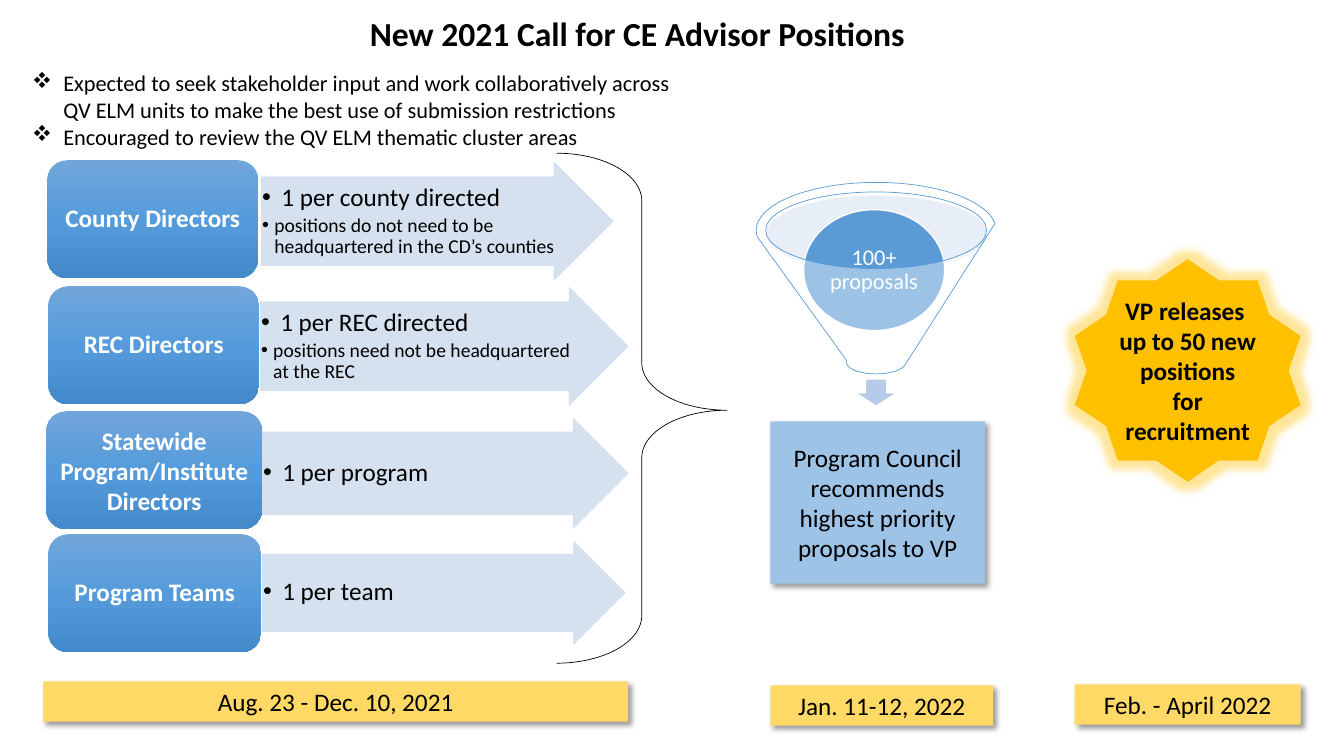
from dataclasses import dataclass
from copy import deepcopy

from pptx import Presentation
from pptx.dml.color import RGBColor
from pptx.enum.shapes import MSO_SHAPE
from pptx.enum.text import MSO_ANCHOR, PP_ALIGN
from pptx.oxml import parse_xml
from pptx.oxml.ns import nsdecls, qn
from pptx.util import Inches, Pt

RECTANGLE = MSO_SHAPE.RECTANGLE
ROUNDED = MSO_SHAPE.ROUNDED_RECTANGLE
RIGHT_ARROW = MSO_SHAPE.RIGHT_ARROW
DOWN_ARROW = MSO_SHAPE.DOWN_ARROW
ELLIPSE = MSO_SHAPE.OVAL
FUNNEL = MSO_SHAPE.FUNNEL
STAR = MSO_SHAPE.STAR_10_POINT
BRACE = MSO_SHAPE.RIGHT_BRACE
CENTER = PP_ALIGN.CENTER
LEFT = PP_ALIGN.LEFT
MIDDLE = MSO_ANCHOR.MIDDLE
TOP = MSO_ANCHOR.TOP

FONT = "Calibri"
DOT = ("•", "Arial")
DIAMOND = ("v", "Wingdings")
COLORS = {
    "black": "000000",
    "white": "FFFFFF",
    "arrow": "D2DEEF",
    "date": "FFD966",
    "star": "FFC000",
    "rim": "C4D5EB",
    "down_arrow": "B5CBE7",
    "council": "9DC3E6",
    "blue": "5B9BD5",
    "label_top": "71A6DB",
    "label_middle": "559BDB",
    "label_bottom": "448ACA",
}
LABEL_STOPS = ((0, "label_top"), (0.5, "label_middle"), (1, "label_bottom"))
SHADOW = (
    f'<a:outerShdw {nsdecls("a")} blurRad="50800" dist="38100" dir="2700000" algn="tl" '
    f'rotWithShape="0"><a:srgbClr val="{COLORS["black"]}"><a:alpha val="40000"/>'
    "</a:srgbClr></a:outerShdw>"
)
GLOW = (
    f'<a:glow {nsdecls("a")} rad="139700"><a:srgbClr val="{COLORS["star"]}">'
    '<a:alpha val="40000"/></a:srgbClr></a:glow>'
)


@dataclass
class Box:
    left: float
    top: float
    width: float
    height: float

    def lengths(self):
        return [Inches(value) for value in (self.left, self.top, self.width, self.height)]


@dataclass
class Line:
    text: str
    size: float = 18
    color: str = "black"
    bold: bool = False
    align: PP_ALIGN = CENTER
    spacing: float = 1.0
    after: float = 0
    bullet: tuple[str, ...] = ()
    indent: float = 0


@dataclass
class Director:
    name: str
    label: Box
    arrow: Box
    quota: str
    detail: str = ""
    spacing: float = 0.9


@dataclass
class Period:
    text: str
    box: Box


DIRECTORS = [
    Director("County Directors", Box(0.47, 1.59, 2.09, 1.17), Box(2.59, 1.61, 3.49, 1.17),
             "1 per county directed",
             "positions do not need to be headquartered in the CD’s counties"),
    Director("REC Directors", Box(0.48, 2.84, 2.09, 1.17), Box(2.58, 2.85, 3.65, 1.17),
             "1 per REC directed", "positions need not be headquartered at the REC"),
    Director("Statewide Program/Institute Directors", Box(0.46, 4.08, 2.14, 1.17),
             Box(2.6, 4.15, 3.63, 1.09), "1 per program", spacing=1.0),
    Director("Program Teams", Box(0.48, 5.3, 2.11, 1.17), Box(2.6, 5.37, 3.6, 1.02),
             "1 per team"),
]
PERIODS = [
    Period("Aug. 23 - Dec. 10, 2021", Box(0.43, 6.76, 5.8, 0.4)),
    Period("Jan. 11-12, 2022", Box(7.64, 6.8, 2.21, 0.4)),
    Period("Feb. - April 2022", Box(10.66, 6.79, 2.24, 0.4)),
]


def rgb(name: str) -> RGBColor:
    return RGBColor.from_string(COLORS[name])


def set_opacity(shape, opacity: float) -> None:
    for color in shape._element.spPr.iter(qn("a:srgbClr")):
        color.append(parse_xml(f'<a:alpha {nsdecls("a")} val="{round(opacity * 100000)}"/>'))


def add_figure(slide, kind, box: Box, fill: str = "", line: str = "",
               line_width: float = 0.5, effect: str = ""):
    shape = slide.shapes.add_shape(kind, *box.lengths())
    shape.shadow.inherit = False
    if fill:
        shape.fill.solid()
        shape.fill.fore_color.rgb = rgb(fill)
    else:
        shape.fill.background()
    if line:
        shape.line.color.rgb = rgb(line)
        shape.line.width = Pt(line_width)
    else:
        shape.line.fill.background()
    if effect:
        shape._element.spPr.find(qn("a:effectLst")).append(parse_xml(effect))
    return shape


def fill_gradient(shape, stops) -> None:
    shape.fill.gradient()
    shape.fill.gradient_angle = 270
    stop_list = shape._element.spPr.find(".//" + qn("a:gsLst"))
    stop_list.insert(1, deepcopy(stop_list[0]))
    for stop, (position, color) in zip(shape.fill.gradient_stops, stops):
        stop.position = position
        stop.color.rgb = rgb(color)


def write(shape, lines: list[Line], inset_x: float = 0.1, inset_y: float = 0.05,
          anchor: MSO_ANCHOR = MIDDLE) -> None:
    frame = shape.text_frame
    frame.word_wrap = True
    frame.vertical_anchor = anchor
    frame.margin_left = frame.margin_right = Inches(inset_x)
    frame.margin_top = frame.margin_bottom = Inches(inset_y)
    for index, line in enumerate(lines):
        paragraph = frame.add_paragraph() if index else frame.paragraphs[0]
        paragraph.text = line.text
        paragraph.alignment = line.align
        paragraph.line_spacing = line.spacing
        paragraph.space_after = Pt(line.after)
        paragraph.font.name = FONT
        paragraph.font.size = Pt(line.size)
        paragraph.font.bold = line.bold
        paragraph.font.color.rgb = rgb(line.color)
        if line.bullet:
            symbol, typeface = line.bullet
            properties = paragraph._p.get_or_add_pPr()
            properties.set("marL", str(Inches(line.indent)))
            properties.set("indent", str(-Inches(line.indent)))
            for tag in (f'buFont {nsdecls("a")} typeface="{typeface}"',
                        f'buChar {nsdecls("a")} char="{symbol}"'):
                properties.insert_element_before(parse_xml(f"<a:{tag}/>"),
                                                 "a:tabLst", "a:defRPr", "a:extLst")


def add_text(slide, box: Box, lines: list[Line]) -> None:
    write(slide.shapes.add_textbox(*box.lengths()), lines, anchor=TOP)


def add_director(slide, director: Director) -> None:
    arrow = add_figure(slide, RIGHT_ARROW, director.arrow, "arrow", "arrow")
    arrow.adjustments[0] = 0.75
    arrow.adjustments[1] = 0.5
    set_opacity(arrow, 0.9)
    lines = [Line(director.quota, align=LEFT, spacing=0.9, after=2.7, bullet=DOT, indent=0.19)]
    if director.detail:
        lines.append(Line(director.detail, 14, align=LEFT, spacing=0.9, after=2.1,
                          bullet=DOT, indent=0.12))
    write(arrow, lines, 0.01, 0.01)

    label = add_figure(slide, ROUNDED, director.label)
    fill_gradient(label, LABEL_STOPS)
    write(label, [Line(director.name, color="white", bold=True, spacing=director.spacing)],
          0.07, 0.04)


def add_selection(slide) -> None:
    rim = add_figure(slide, ELLIPSE, Box(7.6, 1.94, 2.19, 0.76), "rim")
    set_opacity(rim, 0.4)
    add_figure(slide, DOWN_ARROW, Box(8.48, 3.76, 0.42, 0.27), "down_arrow", "white", 1)
    council = add_figure(slide, RECTANGLE, Box(7.64, 4.18, 2.13, 1.61), "council", effect=SHADOW)
    write(council, [Line("Program Council recommends"),
                    Line("highest priority proposals to VP")], 0.14, 0.14)
    proposals = add_figure(slide, ELLIPSE, Box(7.97, 2.08, 1.4, 1.2), "blue", "white", 1)
    write(proposals, [Line("100+ proposals", 16, "white", spacing=0.9)], 0.02, 0.02)
    funnel = add_figure(slide, FUNNEL, Box(7.5, 1.81, 2.38, 1.9), "white")
    set_opacity(funnel, 0.4)
    funnel.line.color.rgb = rgb("blue")
    funnel.line.width = Pt(0.5)


def main() -> None:
    presentation = Presentation()
    presentation.slide_width = Inches(13.33)
    presentation.slide_height = Inches(7.5)
    slide = presentation.slides.add_slide(presentation.slide_layouts[6])

    for director in DIRECTORS:
        add_director(slide, director)
    star = add_figure(slide, STAR, Box(10.66, 2.57, 2.24, 2.21), "star", effect=GLOW)
    write(star, [Line(text, bold=True) for text in
                 ("VP releases ", "up to 50 new positions", "for recruitment")])
    brace = add_figure(slide, BRACE, Box(5.52, 1.52, 1.69, 5.06), line="black")
    brace.adjustments[0] = 0.279
    brace.adjustments[1] = 0.504
    for period in PERIODS:
        bar = add_figure(slide, RECTANGLE, period.box, "date", effect=SHADOW)
        write(bar, [Line(period.text)])
    add_selection(slide)
    add_text(slide, Box(0.22, 0.64, 6.77, 0.9), [
        Line(text, 16, align=LEFT, bullet=DIAMOND, indent=0.31) for text in
        ("Expected to seek stakeholder input and work collaboratively across "
         "QV ELM units to make the best use of submission restrictions",
         "Encouraged to review the QV ELM thematic cluster areas")])
    add_text(slide, Box(3.57, 0.08, 5.6, 0.5),
             [Line("New 2021 Call for CE Advisor Positions", 24, bold=True, align=LEFT)])
    presentation.save("out.pptx")


if __name__ == "__main__":
    main()
